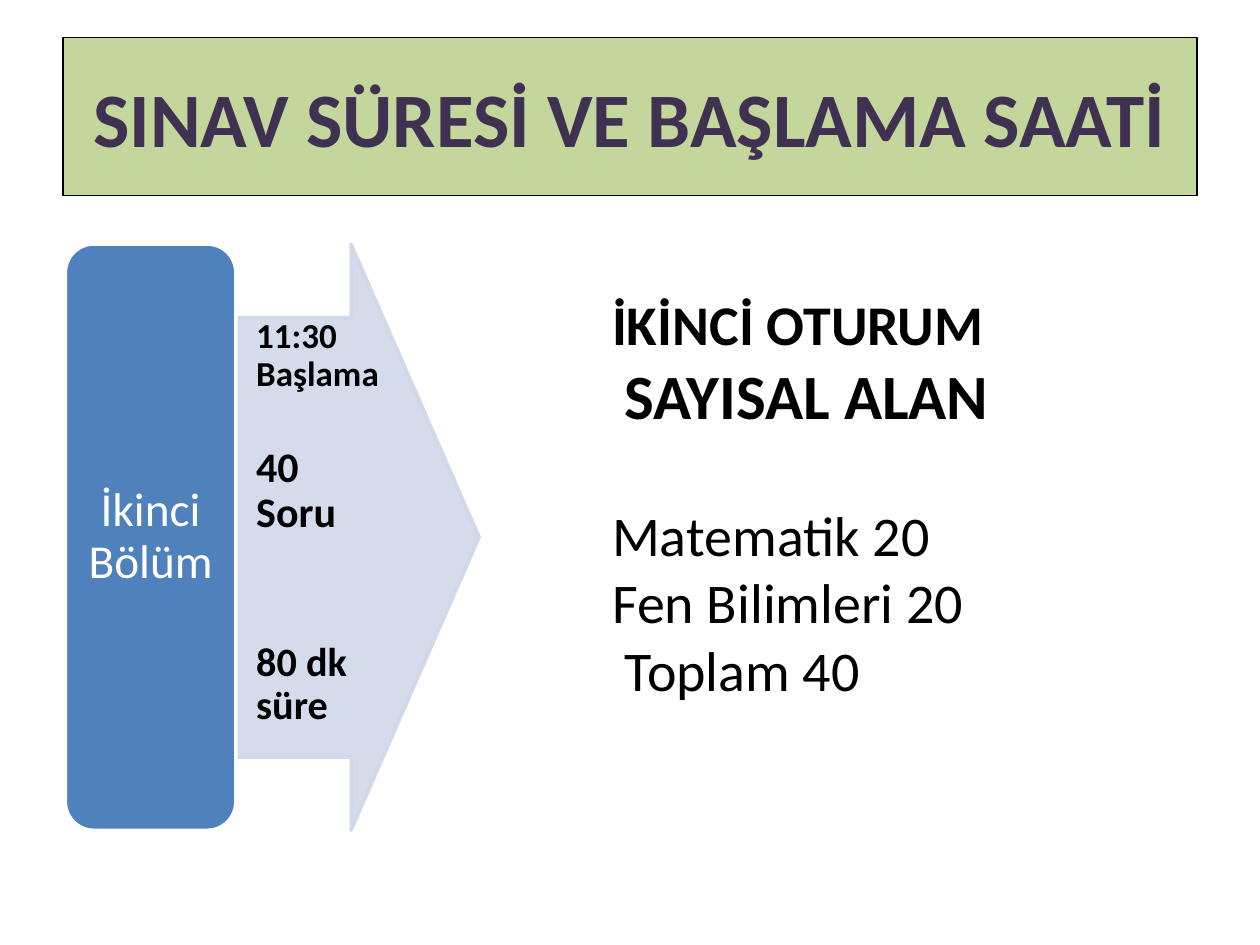
from pptx import Presentation
from pptx.dml.color import RGBColor
from pptx.enum.shapes import MSO_SHAPE as Shape
from pptx.enum.text import MSO_ANCHOR as Anchor, PP_ALIGN as Align
from pptx.oxml.ns import qn
from pptx.util import Pt
from lxml.etree import SubElement

FONT = "Calibri"
INDENT = 7.2
TITLE = ("SINAV SÜRESİ VE BAŞLAMA SAATİ", 44, True, 0, 0)
SECTION = ("İkinci Bölüm", 27, False, 0, 0)
# text, size, bold, space before, left indent
SCHEDULE = [
    ("11:30 Başlama", 20, True, 0, 0),
    ("40 Soru", 24, True, 29.7, 0),
    ("80 dk süre", 23, True, 59.8, 0),
]
SUBJECTS = [
    ("İKİNCİ OTURUM", 32, True, 0, 0),
    ("SAYISAL ALAN", 36, True, 0, INDENT),
    ("Matematik 20", 32, False, 39, 0),
    ("Fen Bilimleri 20", 32, False, 0, 0),
    ("Toplam 40", 32, False, 0, INDENT),
]


def color(value):
    return RGBColor.from_string(value)


def write(box, rows, ink="000000", align=Align.LEFT, anchor=Anchor.TOP,
          spacing=None, insets=(7.2, 3.6)):
    frame = box.text_frame
    frame.word_wrap = True
    frame.vertical_anchor = anchor
    frame.margin_left = frame.margin_right = Pt(insets[0])
    frame.margin_top = frame.margin_bottom = Pt(insets[1])
    for index, (text, size, bold, before, indent) in enumerate(rows):
        para = frame.paragraphs[0] if index == 0 else frame.add_paragraph()
        para.text = text
        para.alignment = align
        if spacing:
            para.line_spacing = spacing
        if before:
            para.space_before = Pt(before)
        if indent:
            para._p.get_or_add_pPr().set("marL", str(Pt(indent)))
        para.font.name = FONT
        para.font.size = Pt(size)
        para.font.bold = bold
        para.font.color.rgb = color(ink)


def add_shape(page, kind, place, fill, line, width):
    shape = page.shapes.add_shape(kind, *map(Pt, place))
    shape.shadow.inherit = False
    shape.fill.solid()
    shape.fill.fore_color.rgb = color(fill)
    shape.line.color.rgb = color(line)
    shape.line.width = Pt(width)
    return shape


def set_opacity(shape, percent):
    for tint in shape._element.spPr.iter(qn("a:srgbClr")):
        SubElement(tint, qn("a:alpha")).set("val", str(percent * 1000))


def main():
    deck = Presentation()
    deck.slide_width, deck.slide_height = Pt(720), Pt(540)
    page = deck.slides.add_slide(deck.slide_layouts[6])

    banner = add_shape(page, Shape.RECTANGLE, (36, 21.6, 648, 90), "C3D69B", "000000", 0.75)
    write(banner, [TITLE], "403152", Align.CENTER, Anchor.MIDDLE)

    arrow = add_shape(page, Shape.RIGHT_ARROW, (127.4, 139.5, 146.5, 335), "D0D8E8", "D0D8E8", 2)
    arrow.adjustments[0], arrow.adjustments[1] = 0.75, 0.5
    set_opacity(arrow, 90)

    schedule = page.shapes.add_textbox(*map(Pt, (145.7, 181.4, 73.4, 250.6)))
    write(schedule, SCHEDULE, spacing=0.9, insets=(0.7, 0.7))

    section = add_shape(page, Shape.ROUNDED_RECTANGLE, (37.4, 139.5, 97.4, 335), "4F81BD", "FFFFFF", 2)
    write(section, [SECTION], "FFFFFF", Align.CENTER, Anchor.MIDDLE, 0.9, (6, 4))

    subjects = page.shapes.add_textbox(*map(Pt, (342.7, 162, 360, 244.8)))
    write(subjects, SUBJECTS)

    deck.save("out.pptx")


if __name__ == "__main__":
    main()
